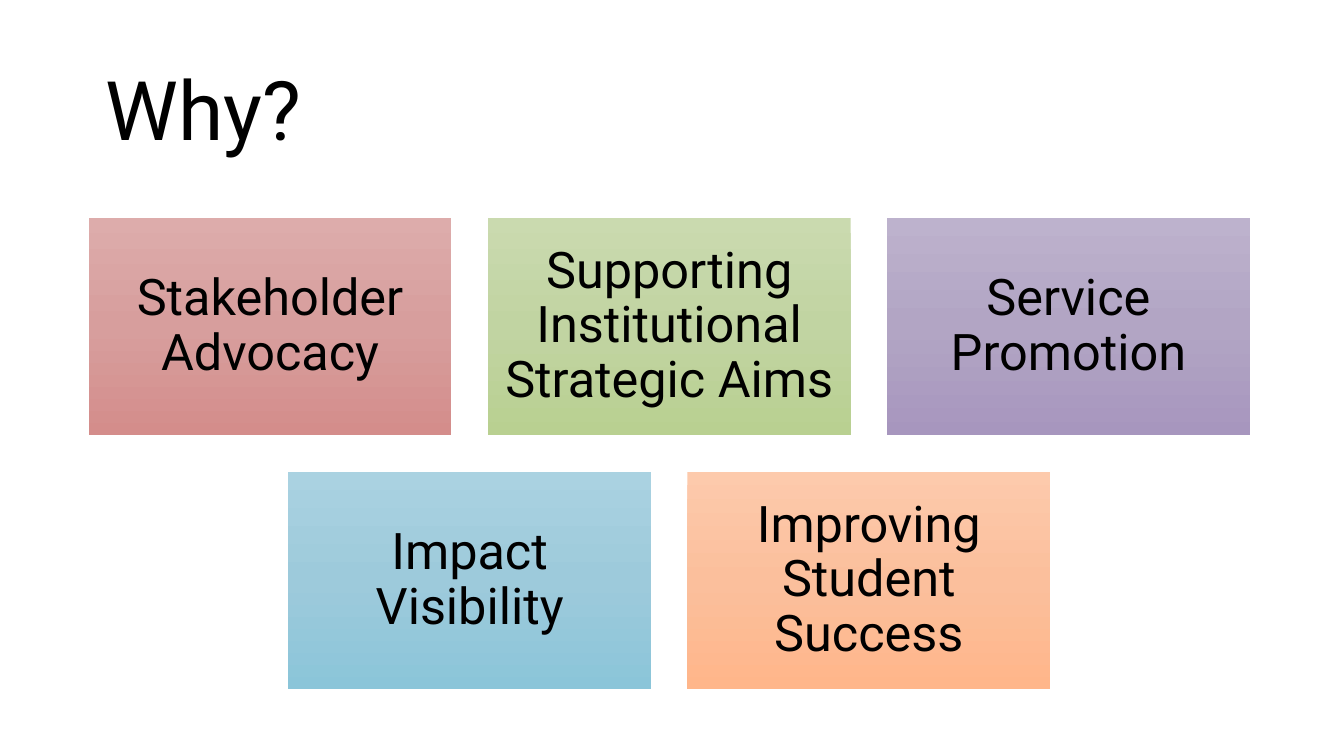
from copy import deepcopy
from typing import NamedTuple

from pptx import Presentation
from pptx.dml.color import RGBColor
from pptx.enum.shapes import MSO_SHAPE as Shape
from pptx.enum.text import MSO_ANCHOR as Anchor, PP_ALIGN as Align
from pptx.oxml.ns import qn
from pptx.util import Inches, Pt

FONT = "Roboto"
BLACK = RGBColor(0x00, 0x00, 0x00)
SLIDE_W = Inches(10)
SLIDE_H = SLIDE_W * 9 // 16
CARD_W, CARD_H, GAP = 2.7, 1.62, 0.27
CENTER_X, TOP = 4.98, 1.62


class Reason(NamedTuple):
    text: str
    top: RGBColor
    middle: RGBColor
    bottom: RGBColor


RED = RGBColor(0xDD, 0xAC, 0xAB), RGBColor(0xD7, 0x9E, 0x9D), RGBColor(0xD4, 0x8D, 0x8B)
GREEN = RGBColor(0xCA, 0xDA, 0xAF), RGBColor(0xC1, 0xD4, 0xA2), RGBColor(0xB9, 0xD0, 0x91)
PURPLE = RGBColor(0xBD, 0xB2, 0xCD), RGBColor(0xB2, 0xA5, 0xC4), RGBColor(0xA7, 0x96, 0xBE)
BLUE = RGBColor(0xAA, 0xD2, 0xE1), RGBColor(0x9D, 0xCA, 0xDB), RGBColor(0x8B, 0xC5, 0xD9)
ORANGE = RGBColor(0xFD, 0xCA, 0xAC), RGBColor(0xFB, 0xBF, 0x9C), RGBColor(0xFF, 0xB6, 0x8A)

ROWS = [
    [
        Reason("Stakeholder Advocacy", *RED),
        Reason("Supporting Institutional Strategic Aims", *GREEN),
        Reason("Service Promotion", *PURPLE),
    ],
    [
        Reason("Impact Visibility", *BLUE),
        Reason("Improving Student Success", *ORANGE),
    ],
]


def write(sp, text: str, size: int, align: Align) -> None:
    tf = sp.text_frame
    tf.word_wrap = True
    tf.vertical_anchor = Anchor.MIDDLE
    p = tf.paragraphs[0]
    p.alignment = align
    p.line_spacing = 0.9
    r = p.add_run()
    r.text = text
    r.font.name = FONT
    r.font.size = Pt(size)
    r.font.color.rgb = BLACK


def fill_gradient(sp, reason: Reason) -> None:
    sp.fill.gradient()
    sp.fill.gradient_angle = 270
    stop_list = sp._element.spPr.find(f".//{qn('a:gsLst')}")
    stop_list.insert(1, deepcopy(stop_list[0]))
    colors = reason.top, reason.middle, reason.bottom
    for stop, color, position in zip(sp.fill.gradient_stops, colors, (0, 0.5, 1)):
        stop.color.rgb = color
        stop.position = position


def add_card(slide, reason: Reason, left: float, top: float) -> None:
    sp = slide.shapes.add_shape(
        Shape.RECTANGLE, Inches(left), Inches(top), Inches(CARD_W), Inches(CARD_H)
    )
    sp.shadow.inherit = False
    sp.line.fill.background()
    fill_gradient(sp, reason)
    tf = sp.text_frame
    tf.margin_left = tf.margin_right = tf.margin_top = tf.margin_bottom = Inches(0.11)
    write(sp, reason.text, 27, Align.CENTER)


def main() -> None:
    prs = Presentation()
    prs.slide_width, prs.slide_height = SLIDE_W, SLIDE_H
    slide = prs.slides.add_slide(prs.slide_layouts[6])

    title = slide.shapes.add_textbox(Inches(0.69), Inches(0.3), Inches(8.62), Inches(1.09))
    write(title, "Why?", 44, Align.LEFT)

    for row, reasons in enumerate(ROWS):
        row_width = len(reasons) * (CARD_W + GAP) - GAP
        for col, reason in enumerate(reasons):
            left = CENTER_X - row_width / 2 + col * (CARD_W + GAP)
            add_card(slide, reason, left, TOP + row * (CARD_H + GAP))

    prs.save("out.pptx")


if __name__ == "__main__":
    main()
